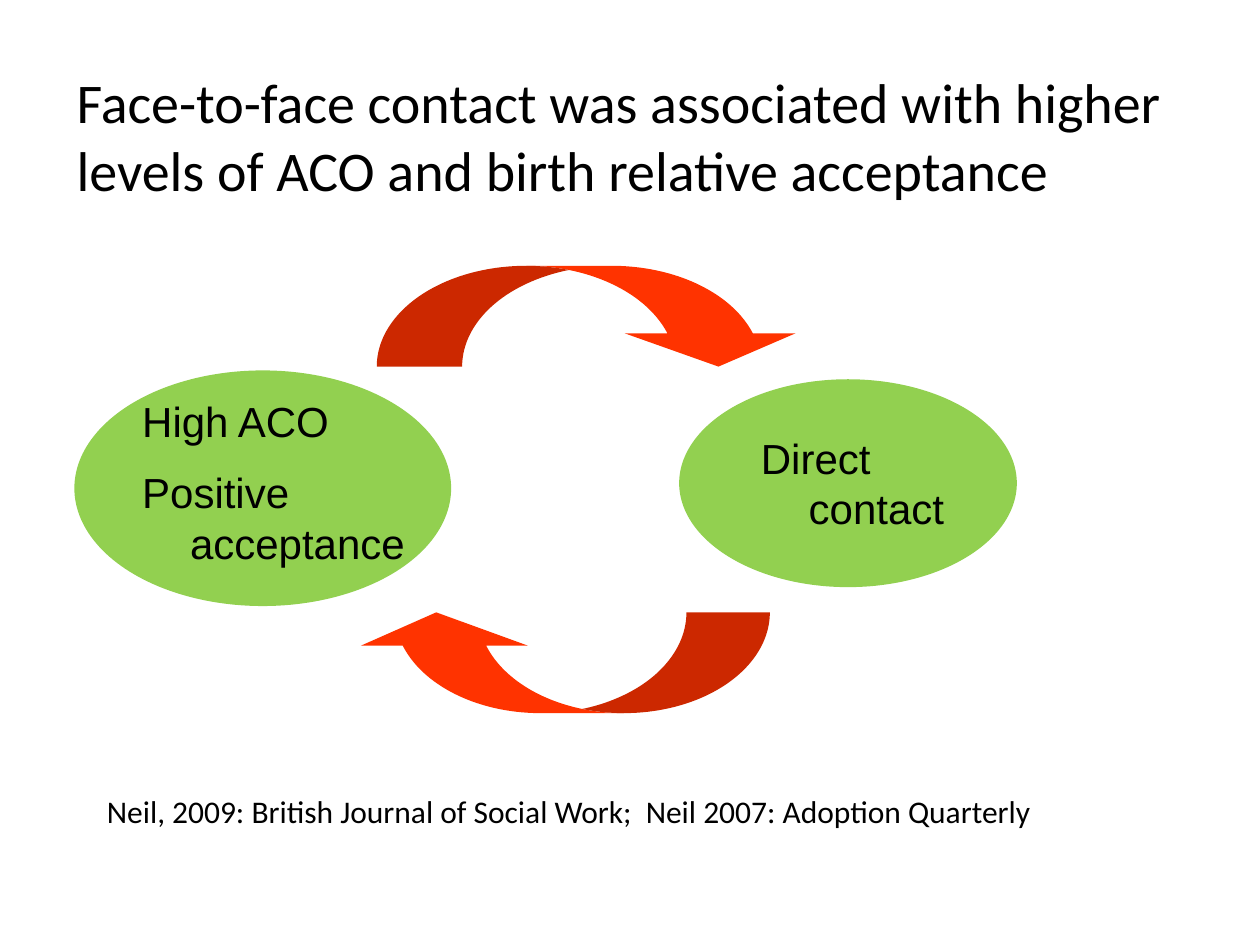
from pptx import Presentation
from pptx.dml.color import RGBColor
from pptx.enum.shapes import MSO_SHAPE
from pptx.util import Inches, Pt

OVAL = MSO_SHAPE.OVAL
CURVED_ARROW = MSO_SHAPE.CURVED_DOWN_ARROW
BLACK = RGBColor(0x00, 0x00, 0x00)
GREEN = RGBColor(0x92, 0xD0, 0x50)
RED = RGBColor(0xFF, 0x33, 0x00)

prs = Presentation()
prs.slide_width = Inches(10)
prs.slide_height = Inches(7.5)
slide = prs.slides.add_slide(prs.slide_layouts[6])


def add_text(lines, left, top, width, height, size, font="Calibri", hanging=0, gap=0):
    box = slide.shapes.add_textbox(Inches(left), Inches(top), Inches(width), Inches(height))
    frame = box.text_frame
    frame.word_wrap = True
    for index, line in enumerate(lines):
        paragraph = frame.paragraphs[0] if index == 0 else frame.add_paragraph()
        paragraph.text = line
        if index:
            paragraph.space_before = Pt(gap)
        if hanging:
            properties = paragraph._p.get_or_add_pPr()
            properties.set("marL", str(Inches(hanging)))
            properties.set("indent", str(-Inches(hanging)))
        paragraph.font.size = Pt(size)
        paragraph.font.name = font
        paragraph.font.color.rgb = BLACK


def add_filled(kind, left, top, width, height, color):
    shape = slide.shapes.add_shape(kind, Inches(left), Inches(top), Inches(width), Inches(height))
    shape.shadow.inherit = False
    shape.fill.solid()
    shape.fill.fore_color.rgb = color
    shape.line.fill.background()
    return shape


add_text(
    ["Face-to-face contact was associated with higher levels of ACO and birth relative acceptance"],
    0.51, 0.49, 9, 4.95, size=32,
)

add_filled(OVAL, 0.59, 2.94, 2.99, 1.87, GREEN)
add_filled(OVAL, 5.39, 3.01, 2.68, 1.65, GREEN)

add_text(["High ACO", "Positive acceptance"], 1.03, 3.09, 2.52, 1.51,
         size=24, font="Arial", hanging=0.38, gap=12)
add_text(["Direct contact"], 5.94, 3.38, 2.05, 0.91,
         size=24, font="Arial", hanging=0.38)

for left, top, width, rotation in ((2.99, 2.11, 3.39, 0), (2.8, 4.86, 3.31, 180)):
    height = 0.8
    cycle_arrow = add_filled(CURVED_ARROW, left, top, width, height, RED)
    cycle_arrow.rotation = rotation
    cycle_arrow.adjustments[0] = width / height / 5
    cycle_arrow.adjustments[1] = width / height / 2.5
    cycle_arrow.adjustments[2] = 0.33

add_text(["Neil, 2009: British Journal of Social Work;  Neil 2007: Adoption Quarterly"],
         0.75, 6.24, 8.58, 0.4, size=18)

prs.save("out.pptx")
